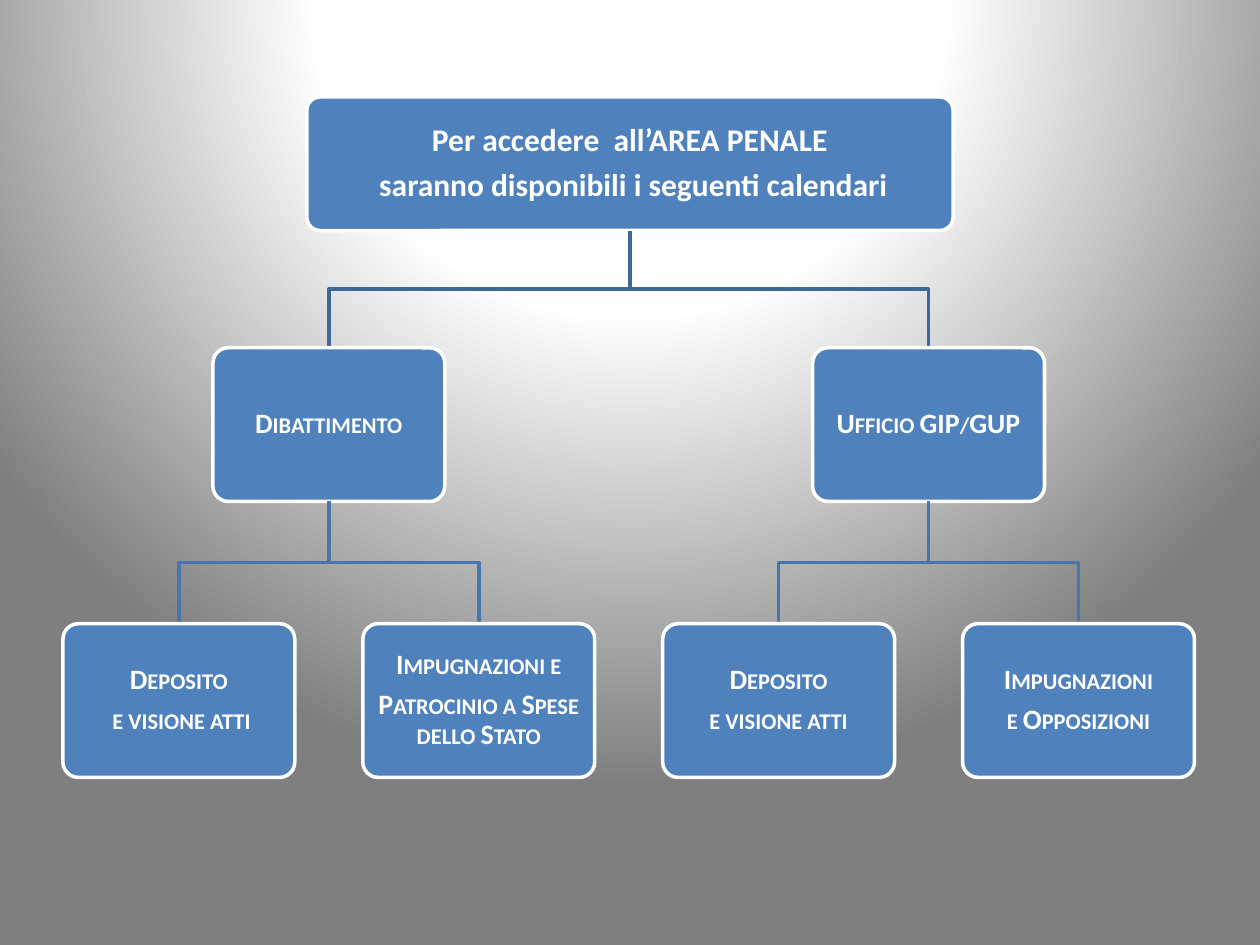
import dataclasses

import pptx
import pptx.dml.color
import pptx.enum.shapes
import pptx.enum.text
import pptx.oxml
import pptx.oxml.ns
import pptx.util

Inches = pptx.util.Inches
Pt = pptx.util.Pt


@dataclasses.dataclass(frozen=True)
class Theme:
    font: str = "Calibri"
    box: str = "4F81BD"
    white: str = "FFFFFF"
    branch_links: str = "3F6797"
    leaf_links: str = "4875AC"
    backdrop: tuple = ((0, "FFFFFF"), (40, "FEFEFE"), (100, "7F7F7F"))
    root_size: int = 18
    node_size: int = 16
    line_width: int = 2


THEME = Theme()
NODE_WIDTH, NODE_HEIGHT = 1.84, 1.22
ROOT_WIDTH, ROOT_HEIGHT = 5.13, 1.06
ROOT_TOP, BRANCH_TOP, LEAF_TOP = 0.77, 2.76, 4.95
FIRST_LEAF_CENTER, LEAF_PITCH = 1.42, 2.38
ROOT_CENTER = 5

ROOT_LINES = ["Per accedere  all’AREA PENALE", " saranno disponibili i seguenti calendari"]
BRANCHES = [
    ("Dibattimento", [
        ["Deposito", " e visione atti"],
        ["Impugnazioni e", "Patrocinio a Spese dello Stato"],
    ]),
    ("Ufficio GIP/GUP", [
        ["Deposito", "e visione atti"],
        ["Impugnazioni", "e Opposizioni"],
    ]),
]


def rgb(color):
    return pptx.dml.color.RGBColor.from_string(color)


def paint_background(slide):
    slide.background.fill.gradient()
    default = slide.background._cSld.find(".//" + pptx.oxml.ns.qn("a:gradFill"))
    stops = "".join(
        f'<a:gs pos="{percent * 1000}"><a:srgbClr val="{color}"/></a:gs>'
        for percent, color in THEME.backdrop
    )
    radial = pptx.oxml.parse_xml(
        f'<a:gradFill {pptx.oxml.ns.nsdecls("a")} rotWithShape="1">'
        f'<a:gsLst>{stops}</a:gsLst><a:path path="circle">'
        '<a:fillToRect l="50000" t="-80000" r="50000" b="180000"/>'
        '</a:path></a:gradFill>'
    )
    default.getparent().replace(default, radial)


def write_line(paragraph, text, *, size, small_caps=False):
    paragraph.alignment = pptx.enum.text.PP_ALIGN.CENTER
    paragraph.line_spacing = 0.9
    paragraph.space_after = Pt(0.35 * size)
    run = paragraph.add_run()
    run.text = text
    run.font.name = THEME.font
    run.font.size = Pt(size)
    run.font.bold = True
    run.font.color.rgb = rgb(THEME.white)
    if small_caps:
        run._r.get_or_add_rPr().set("cap", "small")


def add_node(slide, center, top, width, height, lines, **text_format):
    node = slide.shapes.add_shape(
        pptx.enum.shapes.MSO_SHAPE.ROUNDED_RECTANGLE,
        Inches(center - width / 2), Inches(top), Inches(width), Inches(height),
    )
    node.adjustments[0] = 0.1
    node.shadow.inherit = False
    node.fill.solid()
    node.fill.fore_color.rgb = rgb(THEME.box)
    node.line.color.rgb = rgb(THEME.white)
    node.line.width = Pt(THEME.line_width)
    frame = node.text_frame
    frame.word_wrap = True
    frame.vertical_anchor = pptx.enum.text.MSO_ANCHOR.MIDDLE
    frame.margin_left = frame.margin_right = Inches(0.1)
    frame.margin_top = frame.margin_bottom = Inches(0.1)
    frame.margin_left = frame.margin_right = frame.margin_top = frame.margin_bottom = Inches(0.07)
    for index, text in enumerate(lines):
        paragraph = frame.add_paragraph() if index else frame.paragraphs[0]
        write_line(paragraph, text, **text_format)


def add_link(slide, parent_center, parent_bottom, child_center, child_top, color):
    middle = (parent_bottom + child_top) / 2
    outline = slide.shapes.build_freeform(Inches(parent_center), Inches(parent_bottom))
    corners = [(parent_center, middle), (child_center, middle), (child_center, child_top)]
    outline.add_line_segments([(Inches(x), Inches(y)) for x, y in corners], close=False)
    link = outline.convert_to_shape()
    link.shadow.inherit = False
    link.fill.background()
    link.line.color.rgb = rgb(color)
    link.line.width = Pt(THEME.line_width)


def add_child(slide, parent_center, parent_bottom, center, top, lines, link_color):
    add_link(slide, parent_center, parent_bottom, center, top, link_color)
    add_node(slide, center, top, NODE_WIDTH, NODE_HEIGHT, lines,
             size=THEME.node_size, small_caps=True)


def add_calendar_tree(slide):
    add_node(slide, ROOT_CENTER, ROOT_TOP, ROOT_WIDTH, ROOT_HEIGHT, ROOT_LINES,
             size=THEME.root_size)
    leaf_index = 0
    for office, calendars in BRANCHES:
        centers = [FIRST_LEAF_CENTER + LEAF_PITCH * (leaf_index + i)
                   for i in range(len(calendars))]
        leaf_index += len(calendars)
        office_center = sum(centers) / len(centers)
        add_child(slide, ROOT_CENTER, ROOT_TOP + ROOT_HEIGHT, office_center,
                  BRANCH_TOP, [office], THEME.branch_links)
        for center, lines in zip(centers, calendars):
            add_child(slide, office_center, BRANCH_TOP + NODE_HEIGHT, center,
                      LEAF_TOP, lines, THEME.leaf_links)


def main():
    presentation = pptx.Presentation()
    presentation.slide_width = Inches(10)
    presentation.slide_height = Inches(7.5)
    slide = presentation.slides.add_slide(presentation.slide_layouts[6])
    paint_background(slide)
    add_calendar_tree(slide)
    presentation.save("out.pptx")


if __name__ == "__main__":
    main()
